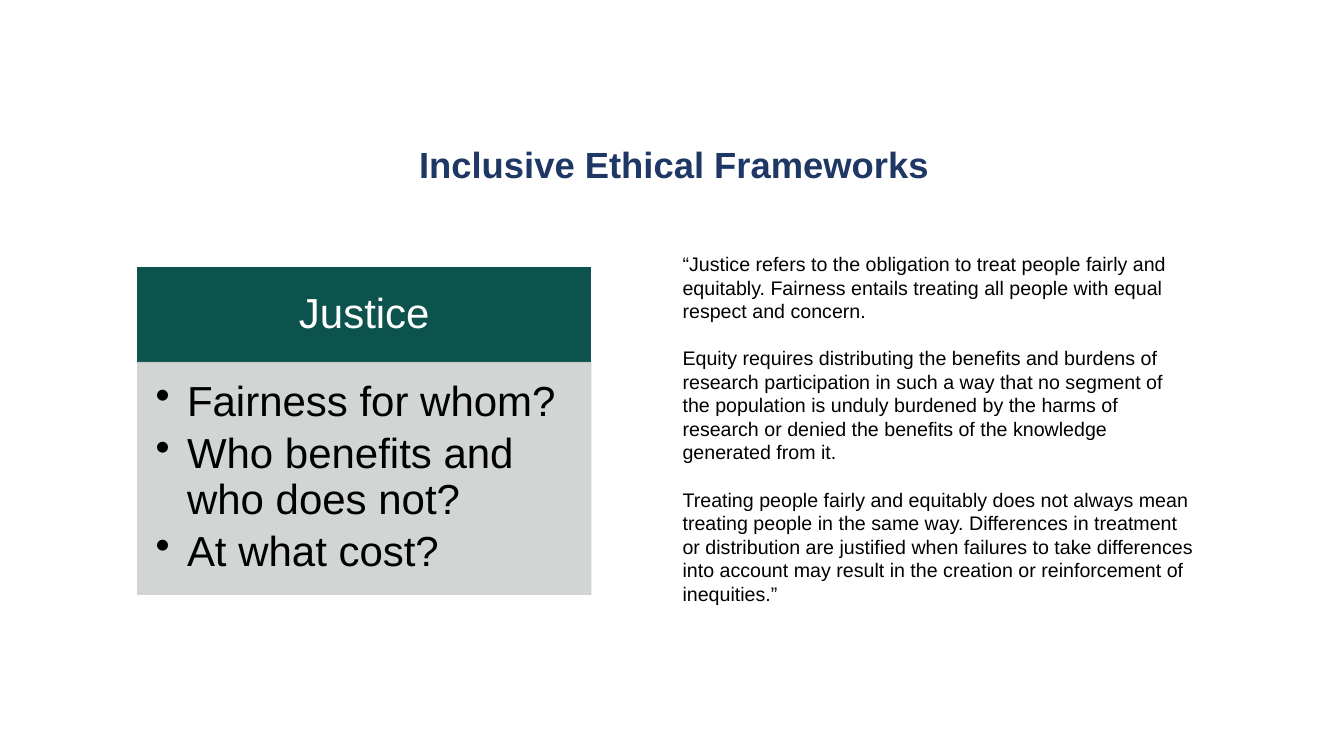
import pptx
import pptx.dml.color
import pptx.enum.shapes
import pptx.enum.text
import pptx.oxml.ns
import pptx.util
import lxml.etree

Pt = pptx.util.Pt
qn = pptx.oxml.ns.qn
ALIGN = pptx.enum.text.PP_ALIGN
ANCHOR = pptx.enum.text.MSO_ANCHOR
AUTO_SIZE = pptx.enum.text.MSO_AUTO_SIZE

TITLE = "Inclusive Ethical Frameworks"
PRINCIPLE = "Justice"
QUESTIONS = ["Fairness for whom?", "Who benefits and who does not?", "At what cost?"]
QUOTATION = [
    "“Justice refers to the obligation to treat people fairly and equitably. "
    "Fairness entails treating all people with equal respect and concern.",
    "Equity requires distributing the benefits and burdens of research participation "
    "in such a way that no segment of the population is unduly burdened by the harms of "
    "research or denied the benefits of the knowledge generated from it.",
    "Treating people fairly and equitably does not always mean treating people in the "
    "same way. Differences in treatment or distribution are justified when failures to "
    "take differences into account may result in the creation or reinforcement of inequities.”",
]


def color(hex_value):
    return pptx.dml.color.RGBColor.from_string(hex_value)


def apply_format(target, values):
    for name, value in values.items():
        setattr(target, name, value)


def add_bullet(paragraph, indent):
    properties = paragraph._p.get_or_add_pPr()
    properties.set("marL", str(Pt(indent)))
    properties.set("indent", str(-Pt(indent)))
    lxml.etree.SubElement(properties, qn("a:buChar")).set("char", "•")


def write_text(frame, texts, font, ink, frame_format, gap=0, bullet_indent=0, **paragraph_format):
    apply_format(frame, {"word_wrap": True, **frame_format})
    for index, text in enumerate(texts):
        paragraph = frame.paragraphs[0] if index == 0 else frame.add_paragraph()
        paragraph.text = text
        apply_format(paragraph, paragraph_format)
        if index:
            paragraph.space_before = Pt(gap)
        if bullet_indent:
            add_bullet(paragraph, bullet_indent)
        apply_format(paragraph.font, {"name": "Arial", **font})
        paragraph.font.color.rgb = color(ink)


def add_panel(slide, box, fill, opacity=100):
    panel = slide.shapes.add_shape(pptx.enum.shapes.MSO_SHAPE.RECTANGLE, *map(Pt, box))
    panel.shadow.inherit = False
    panel.fill.solid()
    panel.fill.fore_color.rgb = color(fill)
    panel.line.color.rgb = color(fill)
    panel.line.width = Pt(1)
    if opacity < 100:
        for tint in panel._element.spPr.iter(qn("a:srgbClr")):
            lxml.etree.SubElement(tint, qn("a:alpha")).set("val", str(opacity * 1000))
    return panel.text_frame


def margins(left, top, right, bottom):
    return {"margin_left": Pt(left), "margin_top": Pt(top),
            "margin_right": Pt(right), "margin_bottom": Pt(bottom)}


def add_title(slide, box):
    title = slide.shapes.add_textbox(*map(Pt, box))
    write_text(title.text_frame, [TITLE], {"size": Pt(26), "bold": True}, "1E3765",
               {"vertical_anchor": ANCHOR.MIDDLE}, alignment=ALIGN.CENTER, line_spacing=0.9)


def add_principle(slide, box):
    left, top, width, height = box
    header_height = 68
    header = add_panel(slide, (left, top, width, header_height), "0D534D")
    write_text(header, [PRINCIPLE], {"size": Pt(30)}, "FFFFFF",
               {"vertical_anchor": ANCHOR.MIDDLE, **margins(16.8, 9.6, 16.8, 9.6)},
               alignment=ALIGN.CENTER, line_spacing=0.9)
    questions = add_panel(slide, (left, top + header_height, width, height - header_height),
                          "CCD1D0", opacity=90)
    write_text(questions, QUESTIONS, {"size": Pt(30)}, "000000",
               {"vertical_anchor": ANCHOR.TOP, **margins(12.6, 12.6, 16.8, 18.9)},
               gap=5, bullet_indent=22.5, alignment=ALIGN.LEFT, line_spacing=0.9)


def add_quotation(slide, box):
    quotation = slide.shapes.add_textbox(*map(Pt, box))
    write_text(quotation.text_frame, QUOTATION, {"size": Pt(14)}, "000000",
               {"auto_size": AUTO_SIZE.SHAPE_TO_FIT_TEXT}, gap=16.8)


def main():
    deck = pptx.Presentation()
    apply_format(deck, {"slide_width": Pt(960), "slide_height": Pt(540)})
    slide = deck.slides.add_slide(deck.slide_layouts[6])
    add_title(slide, (108, 84, 747.5, 70.5))
    add_principle(slide, (98.5, 191, 323.5, 233.5))
    add_quotation(slide, (480.5, 176.5, 380, 245))
    deck.save("out.pptx")


if __name__ == "__main__":
    main()
